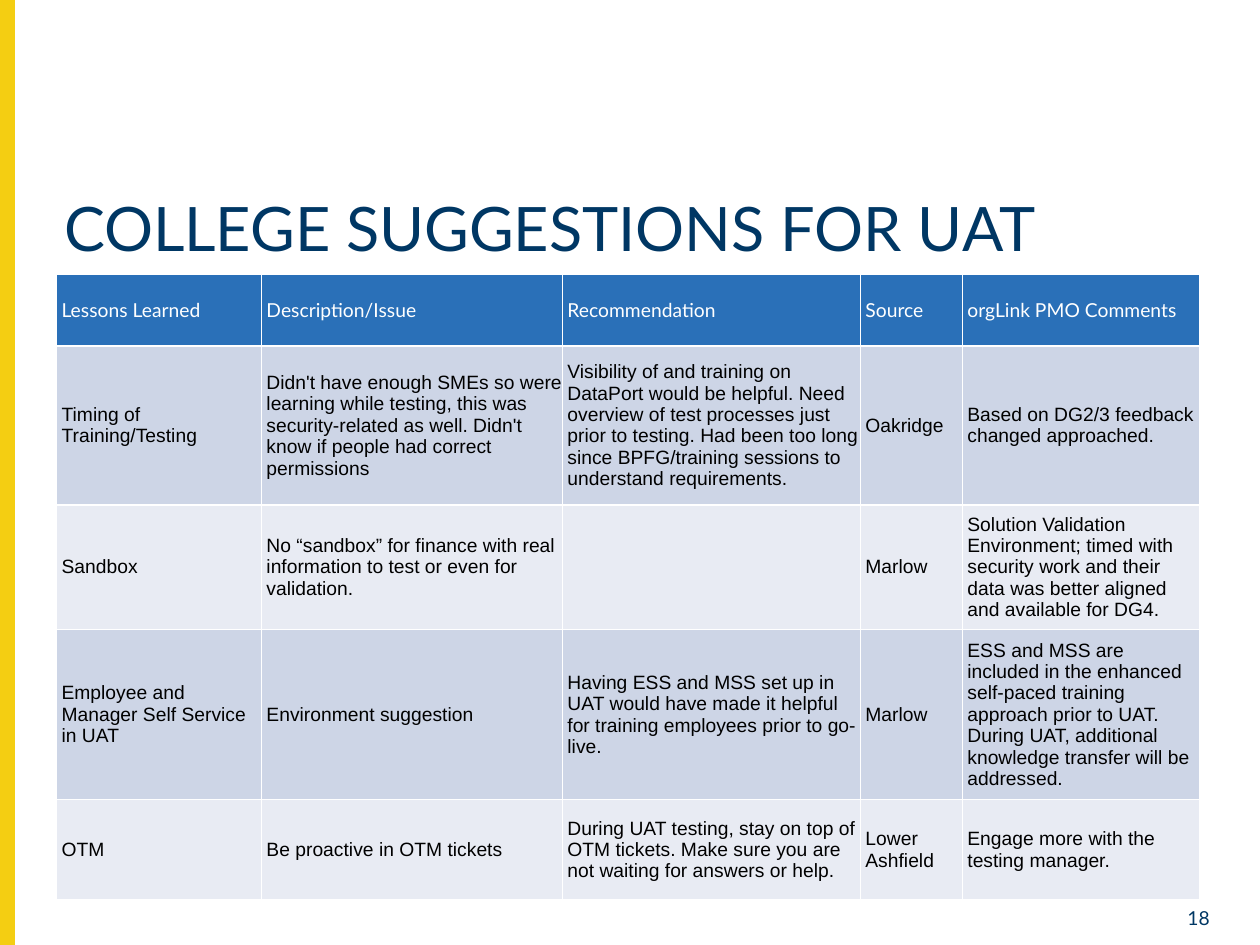
from pptx import Presentation
from pptx.dml.color import RGBColor
from pptx.enum.shapes import MSO_SHAPE
from pptx.enum.text import MSO_ANCHOR as Anchor, PP_ALIGN as Align
from pptx.util import Pt

NAVY = RGBColor(0x00, 0x37, 0x64)
YELLOW = RGBColor(0xF4, 0xCE, 0x12)
BLUE = RGBColor(0x2A, 0x70, 0xB8)
BAND_DARK = RGBColor(0xCD, 0xD5, 0xE6)
BAND_LIGHT = RGBColor(0xE8, 0xEB, 0xF3)
WHITE = RGBColor(0xFF, 0xFF, 0xFF)
BLACK = RGBColor(0x00, 0x00, 0x00)

COLUMN_WIDTHS = [117.1, 172, 170.3, 58.3, 135.8]
ROW_HEIGHTS = [41, 90.7, 71.3, 97.2, 57.2]
ROWS = [
    ["Lessons Learned", "Description/Issue", "Recommendation", "Source",
     "orgLink PMO Comments"],
    ["Timing of Training/Testing",
     "Didn't have enough SMEs so were learning while testing, this was "
     "security-related as well. Didn't know if people had correct permissions",
     "Visibility of and training on DataPort would be helpful. Need overview "
     "of test processes just prior to testing. Had been too long since "
     "BPFG/training sessions to understand requirements.",
     "Oakridge", "Based on DG2/3 feedback changed approached."],
    ["Sandbox",
     "No “sandbox” for finance with real information to test or even for "
     "validation.",
     "", "Marlow",
     "Solution Validation Environment; timed with security work and their "
     "data was better aligned and available for DG4."],
    ["Employee and Manager Self Service in UAT", "Environment suggestion",
     "Having ESS and MSS set up in UAT would have made it helpful for "
     "training employees prior to go-live.",
     "Marlow",
     "ESS and MSS are included in the enhanced self-paced training approach "
     "prior to UAT. During UAT, additional knowledge transfer will be "
     "addressed."],
    ["OTM", "Be proactive in OTM tickets",
     "During UAT testing, stay on top of OTM tickets. Make sure you are not "
     "waiting for answers or help.",
     "Lower Ashfield", "Engage more with the testing manager."],
]


def add_span(para, text, size, font, color):
    span = para.add_run()
    span.text = text
    span.font.size = Pt(size)
    span.font.name = font
    span.font.bold = False
    span.font.color.rgb = color


def add_label(left, top, width, height, text, size, align):
    box = page.shapes.add_textbox(Pt(left), Pt(top), Pt(width), Pt(height))
    frame = box.text_frame
    frame.word_wrap = True
    frame.vertical_anchor = Anchor.MIDDLE
    frame.margin_left = frame.margin_right = Pt(7.2)
    frame.margin_top = frame.margin_bottom = 0
    para = frame.paragraphs[0]
    para.alignment = align
    add_span(para, text, size, "Lato", NAVY)
    return para


deck = Presentation()
deck.slide_width = Pt(720)
deck.slide_height = Pt(540)
page = deck.slides.add_slide(deck.slide_layouts[6])

stripe = page.shapes.add_shape(MSO_SHAPE.RECTANGLE, 0, 0, Pt(8), Pt(540))
stripe.shadow.inherit = False
stripe.fill.solid()
stripe.fill.fore_color.rgb = YELLOW
stripe.line.color.rgb = YELLOW
stripe.line.width = Pt(1)

title = add_label(29.5, 111.4, 653.8, 41.8, "COLLEGE SUGGESTIONS FOR UAT", 35, Align.LEFT)
title.line_spacing = 0.9
add_label(662.4, 516.6, 36, 15.2, "18", 11, Align.RIGHT)

table = page.shapes.add_table(
    len(ROWS), len(COLUMN_WIDTHS), Pt(32.4), Pt(156.8),
    Pt(sum(COLUMN_WIDTHS)), Pt(sum(ROW_HEIGHTS))).table
for column, width in zip(table.columns, COLUMN_WIDTHS):
    column.width = Pt(width)
for row, height in zip(table.rows, ROW_HEIGHTS):
    row.height = Pt(height)

for row_index, texts in enumerate(ROWS):
    if row_index == 0:
        fill, font, color = BLUE, "Lato", WHITE
    else:
        fill = BAND_DARK if row_index % 2 else BAND_LIGHT
        font, color = "Arial", BLACK
    for column_index, text in enumerate(texts):
        cell = table.cell(row_index, column_index)
        cell.vertical_anchor = Anchor.MIDDLE
        cell.margin_left = Pt(2.8)
        cell.margin_top = cell.margin_right = cell.margin_bottom = 0
        cell.fill.solid()
        cell.fill.fore_color.rgb = fill
        if text:
            add_span(cell.text_frame.paragraphs[0], text, 11, font, color)

deck.save("out.pptx")
